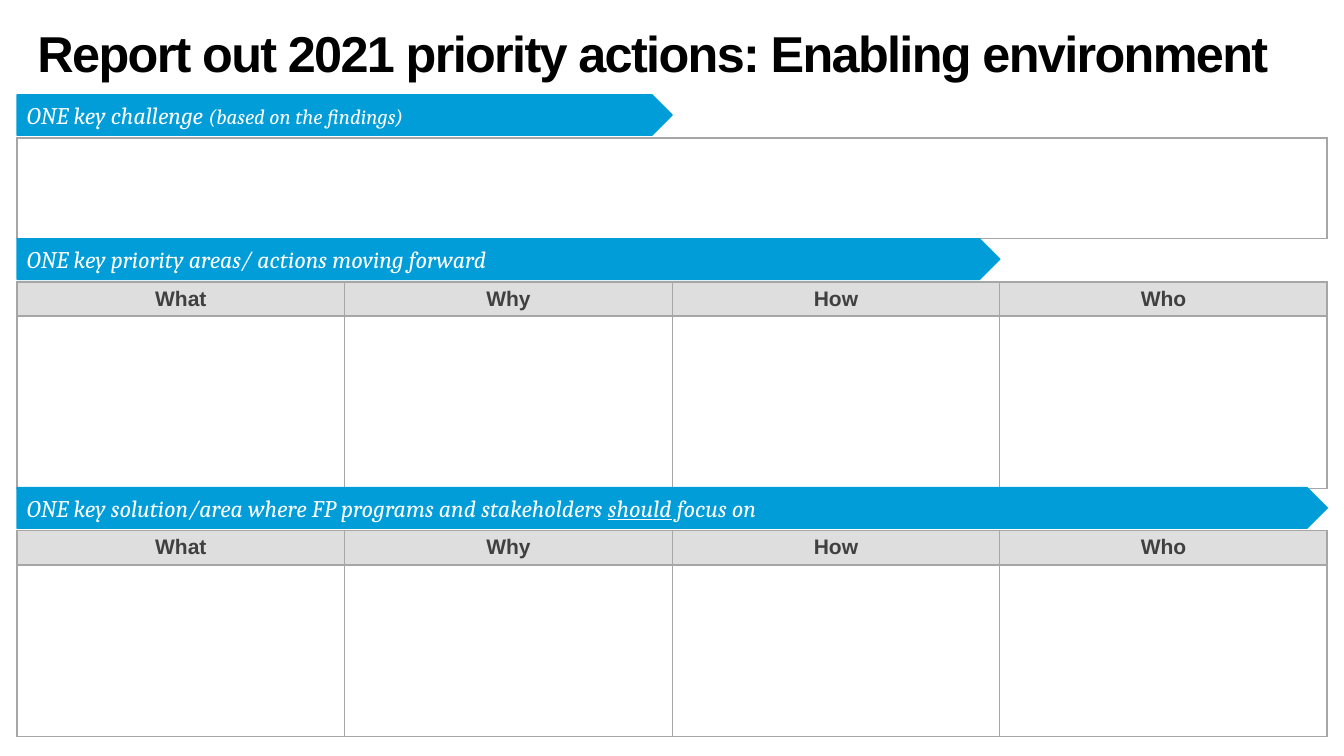
from pptx import Presentation
from pptx.dml.color import RGBColor
from pptx.enum.shapes import MSO_SHAPE
from pptx.enum.text import MSO_ANCHOR, MSO_AUTO_SIZE, PP_ALIGN
from pptx.oxml import parse_xml
from pptx.oxml.ns import nsdecls
from pptx.util import Cm, Pt

HEADING = "Report out 2021 priority actions: Enabling environment"
QUESTIONS = ["What", "Why", "How", "Who"]
SECTIONS = [
    {"top": 2.39, "share": 0.5, "questions": [], "answer_height": 2.54,
     "label": [("ONE key challenge ", {}), ("(based on the findings)", {"size": 15})]},
    {"top": 6.02, "share": 0.75, "questions": QUESTIONS, "answer_height": 4.34,
     "label": [("ONE key priority areas/ actions moving forward", {})]},
    {"top": 12.29, "share": 1, "questions": QUESTIONS, "answer_height": 4.34,
     "label": [("ONE key solution/area where FP programs and stakeholders ", {}),
               ("should", {"underline": True}), (" focus on", {})]},
]
LEFT, WIDTH = 0.43, 33.02
BANNER_HEIGHT, GRID_OFFSET, HEADER_HEIGHT = 1.02, 1.08, 0.86
BLUE, GRAY, RULE = "009DD9", "DEDEDE", "A6A6A6"


def paint(color_format, color):
    color_format.rgb = RGBColor.from_string(color)


def fill_with(target, color):
    target.fill.solid()
    paint(target.fill.fore_color, color)


def write(paragraph, text, size=17, font="Cambria", color="FFFFFF",
          bold=False, italic=False, underline=False, spacing=None):
    run = paragraph.add_run()
    run.text = text
    run.font.size = Pt(size)
    run.font.name = font
    run.font.bold = bold
    run.font.italic = italic
    run.font.underline = underline
    paint(run.font.color, color)
    if spacing is not None:
        run.font._element.set("spc", str(spacing))


def add_borders(cell, widths):
    properties = cell._tc.get_or_add_tcPr()
    for position, (side, width) in enumerate(zip("LRTB", widths)):
        properties.insert(position, parse_xml(
            f'<a:ln{side} {nsdecls("a")} w="{Pt(width)}"><a:solidFill>'
            f'<a:srgbClr val="{RULE}"/></a:solidFill></a:ln{side}>'))


def add_banner(slide, section):
    banner = slide.shapes.add_shape(
        MSO_SHAPE.PENTAGON, Cm(LEFT), Cm(section["top"]),
        Cm(WIDTH * section["share"]), Cm(BANNER_HEIGHT))
    banner.shadow.inherit = False
    fill_with(banner, BLUE)
    paint(banner.line.color, BLUE)
    banner.line.width = Pt(1)
    label = banner.text_frame
    label.word_wrap = True
    label.vertical_anchor = MSO_ANCHOR.MIDDLE
    label.paragraphs[0].alignment = PP_ALIGN.LEFT
    for text, style in section["label"]:
        write(label.paragraphs[0], text, italic=True, **style)


def add_answer_grid(slide, section):
    questions = section["questions"]
    heights = [HEADER_HEIGHT] * bool(questions) + [section["answer_height"]]
    count = len(questions) or 1
    grid = slide.shapes.add_table(
        len(heights), count, Cm(LEFT), Cm(section["top"] + GRID_OFFSET),
        Cm(WIDTH), Cm(sum(heights))).table
    grid.first_row = grid.horz_banding = False
    for column in grid.columns:
        column.width = Cm(WIDTH / count)
    for r, height in enumerate(heights):
        grid.rows[r].height = Cm(height)
        for c in range(count):
            cell = grid.cell(r, c)
            cell.fill.background()
            if questions and r == 0:
                fill_with(cell, GRAY)
                cell.vertical_anchor = MSO_ANCHOR.MIDDLE
                cell.margin_top = cell.margin_bottom = Cm(0.1)
                cell.text_frame.paragraphs[0].alignment = PP_ALIGN.CENTER
                write(cell.text_frame.paragraphs[0], questions[c], size=15,
                      font="Arial", color="404040", bold=True)
            add_borders(cell, [
                1.5 if c == 0 else 0.75,
                1.5 if c == count - 1 else 0.75,
                1.5,
                0.75 if r == 1 else 1.5])


def main():
    deck = Presentation()
    deck.slide_width, deck.slide_height = Cm(33.87), Cm(19.05)
    slide = deck.slides.add_slide(deck.slide_layouts[5])
    title = slide.shapes.title
    title.left, title.top, title.width, title.height = Cm(0.69), Cm(0.58), Cm(32.51), Cm(1.65)
    frame = title.text_frame
    frame.word_wrap = True
    frame.auto_size = MSO_AUTO_SIZE.NONE
    frame.vertical_anchor = MSO_ANCHOR.MIDDLE
    heading = frame.paragraphs[0]
    heading.alignment = PP_ALIGN.LEFT
    heading.line_spacing = 0.9
    write(heading, HEADING, size=36, font="Arial", color="000000", bold=True, spacing=-120)
    for section in SECTIONS:
        add_answer_grid(slide, section)
        add_banner(slide, section)
    deck.save("out.pptx")


if __name__ == "__main__":
    main()
